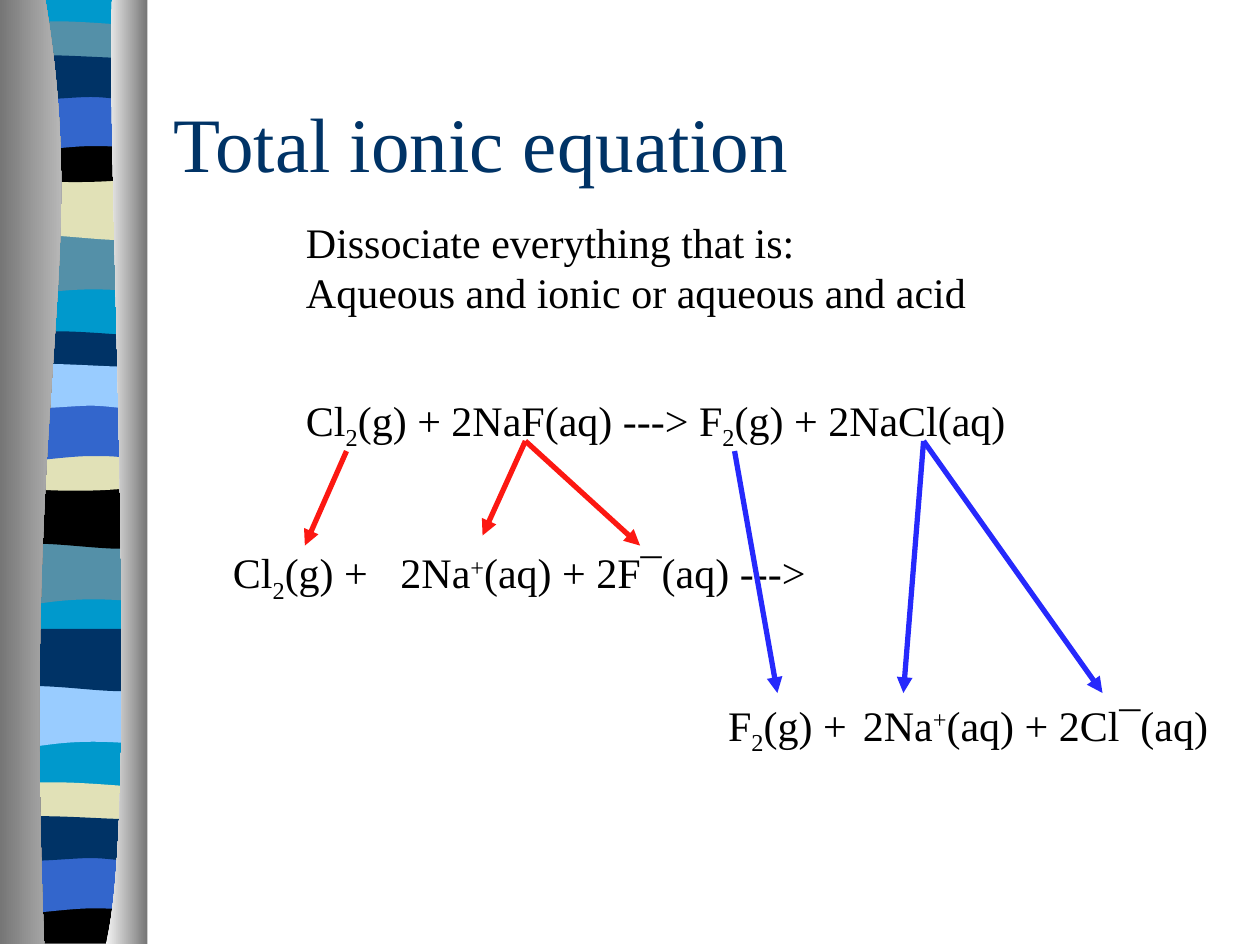
"""Build a chemistry slide that splits a reaction into its total ionic equation."""
import pptx
import pptx.dml.color
import pptx.enum.shapes
import pptx.enum.text
import pptx.oxml
import pptx.oxml.ns
import pptx.util
from pptx.util import Inches

COLORS = {
    "cyan": "0099CC", "teal": "5490A8", "sand": "E1E1B7", "black": "000000",
    "blue": "3366CC", "navy": "003366", "sky": "99CCFF",
    "shade": "767676", "silver": "D8D8D8", "light": "F4F4F4",
    "reactant": "FC1812", "product": "2629FC",
}
FONT = "Times New Roman"
NAMESPACE = 'xmlns:a="http://schemas.openxmlformats.org/drawingml/2006/main"'
LEFT, RIGHT = 0.05, 1.14

BANDS = {
    "swell": [(RIGHT, 0), (RIGHT, 0.47), (0.39, 0.39, 0.24, 0.55, LEFT, 0.47), (LEFT, 0)],
    "dip": [(RIGHT, 0), (RIGHT, 0.47), (0.96, 0.55, 0.39, 0.41, LEFT, 0.47), (LEFT, 0)],
    "bowl": [(RIGHT, 0), (RIGHT, 0.24), (0.96, 0.29, 0.24, 0.29, LEFT, 0.24), (LEFT, 0),
             (0.12, -0.05, 0.29, -0.04, 0.47, -0.04), (0.65, -0.04, 1, -0.01, RIGHT, 0)],
    "sag": [(RIGHT, 0), (RIGHT, 0.32), (0.96, 0.38, 0.24, 0.38, LEFT, 0.32), (LEFT, 0),
            (0.72, 0.05, 0.91, 0, RIGHT, 0)],
    "arch": [(RIGHT, 0), (RIGHT, 0.47), (0.97, 0.42, 0.9, 0.42, 0.72, 0.42),
             (0.54, 0.42, 0.22, 0.47, LEFT, 0.47), (LEFT, 0)],
    "ripple": [(RIGHT, 0), (RIGHT, 0.31), (1.07, 0.36, 0.9, 0.31, 0.72, 0.31),
               (0.54, 0.31, 0.17, 0.36, LEFT, 0.31), (LEFT, 0),
               (0.21, -0.05, 0.79, 0, 0.97, 0), (1.15, 0, 1.1, 0, RIGHT, 0)],
    "foot": [(RIGHT, 0), (RIGHT, 0.37), (LEFT, 0.37), (LEFT, 0),
             (0.72, 0.05, 0.91, 0, RIGHT, 0)],
    "backing": [(RIGHT, 0), (RIGHT, 7.48), (LEFT, 7.48), (LEFT, 0)],
}
STRIPES = [
    ("backing", 0, "cyan"),
    ("swell", 1.85, "teal"), ("dip", 1.41, "sand"), ("bowl", 0.21, "teal"),
    ("sag", 1.08, "black"), ("arch", 0.74, "blue"), ("ripple", 0.46, "navy"),
    ("swell", 4.31, "teal"), ("dip", 3.86, "black"), ("bowl", 2.67, "navy"),
    ("sag", 3.53, "sand"), ("arch", 3.2, "blue"), ("ripple", 2.91, "sky"),
    ("swell", 5.44, "sky"), ("dip", 4.99, "navy"), ("bowl", 6.25, "sand"),
    ("foot", 7.12, "black"), ("arch", 6.79, "blue"), ("ripple", 6.5, "navy"),
]
PANELS = [
    ([(0.36, 0), (0.72, 2.16, 0.17, 2.96, 0.35, 7.49), (0, 7.49), (0, 0)],
     ("shade", "silver")),
    ([(0.89, 0), (0.84, 1.25, 1.12, 6.46, 0.84, 7.49), (1.17, 7.49), (1.17, 0)],
     ("light", "shade")),
]

TITLE = [[("Total ionic equation", 0)]]
SUB, SUPER = -25000, 30000
TEXTS = [
    ((2.33, 1.67, 5.44, 0.9), [[("Dissociate everything that is:", 0)],
                               [("Aqueous and ionic or aqueous and acid", 0)]]),
    ((2.33, 3.08, 5.78, 0.5), [[("Cl", 0), ("2", SUB), ("(g) + 2NaF(aq) ---> F", 0),
                                ("2", SUB), ("(g) + 2NaCl(aq)", 0)]]),
    ((1.75, 4.29, 1.29, 0.5), [[("Cl", 0), ("2", SUB), ("(g) +", 0)]]),
    ((3.08, 4.29, 3.43, 0.5), [[("2Na", 0), ("+", SUPER), ("(aq) + 2F¯(aq) --->", 0)]]),
    ((5.68, 5.5, 1.16, 0.5), [[("F", 0), ("2", SUB), ("(g) +", 0)]]),
    ((6.75, 5.5, 2.96, 0.5), [[("2Na", 0), ("+", SUPER), ("(aq) + 2Cl¯(aq)", 0)]]),
]
ARROWS = [
    ((2.75, 3.58), (2.42, 4.33), "reactant"),
    ((4.17, 3.5), (3.83, 4.25), "reactant"),
    ((4.17, 3.5), (5.08, 4.33), "reactant"),
    ((5.83, 3.58), (6.17, 5.5), "product"),
    ((7.33, 3.5), (7.17, 5.5), "product"),
    ((7.33, 3.5), (8.75, 5.5), "product"),
]


def color(name):
    return pptx.dml.color.RGBColor.from_string(COLORS[name])


def add_outline(page, outline, top=0):
    """Draw an outline whose two-number steps are lines and six-number steps curves."""
    points = [(Inches(step[i]), Inches(step[i + 1] + top))
              for step in outline for i in range(0, len(step), 2)]
    builder = page.shapes.build_freeform(*points[0])
    builder.add_line_segments(points[1:], close=True)
    shape = builder.convert_to_shape()
    shape.shadow.inherit = False
    shape.line.fill.background()
    lines = iter(list(shape._element.iter(pptx.oxml.ns.qn("a:lnTo"))))
    for step in outline[1:]:
        line = next(lines)
        if len(step) == 6:
            curve = pptx.oxml.parse_xml(f"<a:cubicBezTo {NAMESPACE}/>")
            line.addprevious(curve)
            for part in (line, next(lines), next(lines)):
                curve.append(part[0])
                part.getparent().remove(part)
    return shape


def add_panel(page, outline, shades):
    fill = add_outline(page, outline).fill
    fill.gradient()
    fill.gradient_angle = 0
    for stop, shade in zip(fill.gradient_stops, shades):
        stop.color.rgb = color(shade)


def add_text(page, place, lines, size=24, ink="black"):
    box = page.shapes.add_textbox(*map(Inches, place))
    frame = box.text_frame
    frame.word_wrap = False
    for number, spans in enumerate(lines):
        para = frame.paragraphs[0] if number == 0 else frame.add_paragraph()
        para.font.name = FONT
        para.font.size = pptx.util.Pt(size)
        para.font.color.rgb = color(ink)
        for text, baseline in spans:
            span = para.add_run()
            span.text = text
            if baseline:
                span.font._element.set("baseline", str(baseline))
    return frame


def add_arrow(page, start, end, ink):
    arrow = page.shapes.add_connector(
        pptx.enum.shapes.MSO_CONNECTOR.STRAIGHT, *map(Inches, start + end))
    arrow.line.color.rgb = color(ink)
    arrow.line.width = pptx.util.Pt(3)
    head = pptx.oxml.parse_xml(f'<a:tailEnd {NAMESPACE} type="triangle"/>')
    arrow.line._get_or_add_ln().append(head)
    arrow._element.spPr.append(pptx.oxml.parse_xml(f"<a:effectLst {NAMESPACE}/>"))


def main():
    deck = pptx.Presentation()
    deck.slide_width, deck.slide_height = Inches(10), Inches(7.5)
    page = deck.slides.add_slide(deck.slide_layouts[6])
    for band, top, ink in STRIPES:
        fill = add_outline(page, BANDS[band], top).fill
        fill.solid()
        fill.fore_color.rgb = color(ink)
    for outline, shades in PANELS:
        add_panel(page, outline, shades)
    title = add_text(page, (1.28, 0.5, 8.5, 1.25), TITLE, 44, "navy")
    title.word_wrap = True
    title.vertical_anchor = pptx.enum.text.MSO_ANCHOR.MIDDLE
    for place, lines in TEXTS:
        add_text(page, place, lines)
    for start, end, ink in ARROWS:
        add_arrow(page, start, end, ink)
    deck.save("out.pptx")


if __name__ == "__main__":
    main()
